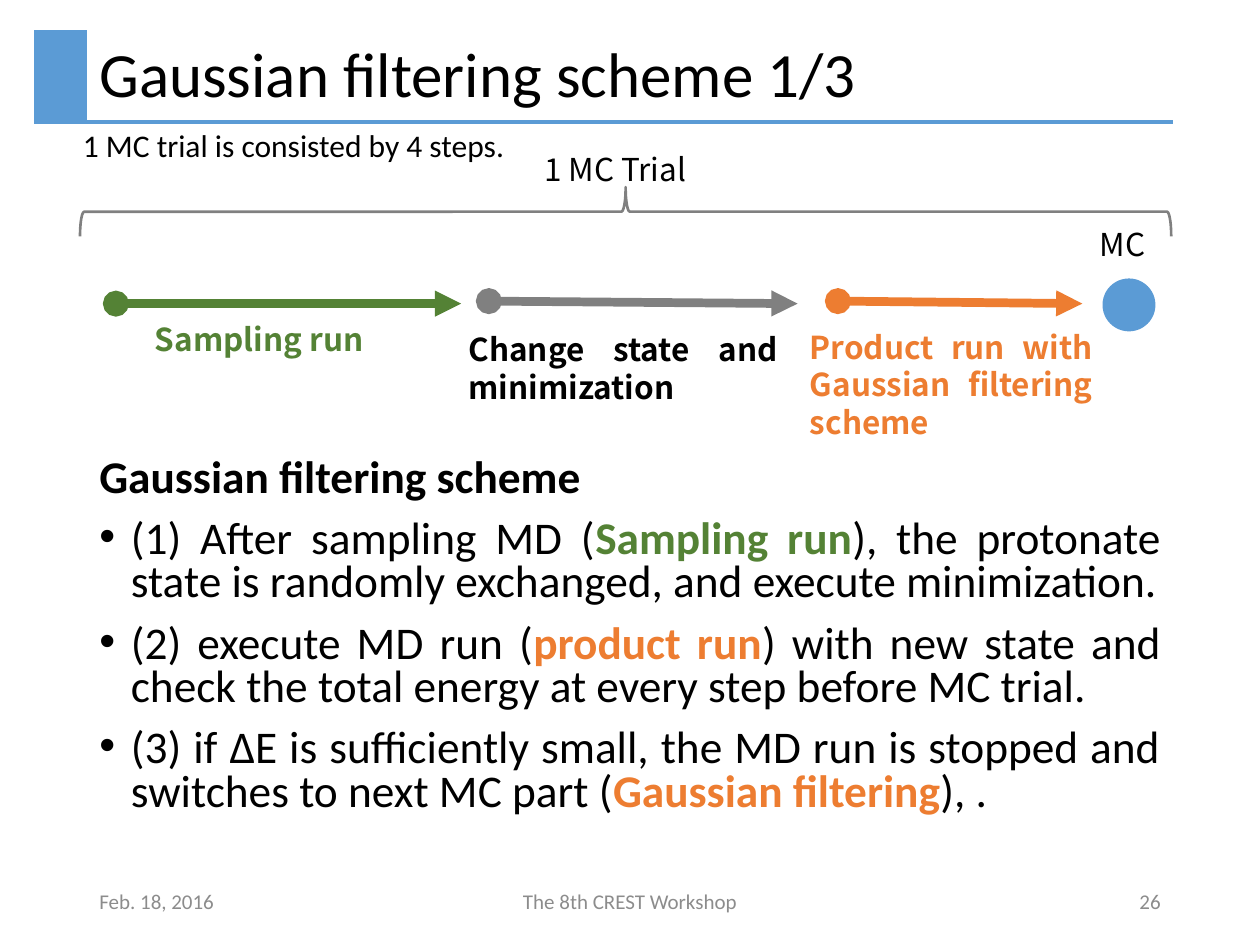
"""Build the Gaussian filtering scheme slide on a grid of 100 columns by 75 rows."""
import dataclasses
import typing

import pptx
import pptx.dml.color
import pptx.enum.dml
import pptx.enum.shapes
import pptx.enum.text
import pptx.oxml
import pptx.oxml.ns
import pptx.util

RGB = pptx.dml.color.RGBColor
BLACK = RGB(0x00, 0x00, 0x00)
BLUE = RGB(0x5B, 0x9B, 0xD5)
GREEN = RGB(0x54, 0x82, 0x35)
ORANGE = RGB(0xED, 0x7D, 0x31)
GRAY = RGB(0x80, 0x80, 0x80)
PALE = RGB(0x8C, 0x8C, 0x8C)

ALIGN = pptx.enum.text.PP_ALIGN
ANCHOR = pptx.enum.text.MSO_ANCHOR
SHAPE = pptx.enum.shapes.MSO_SHAPE
CELL = pptx.util.Inches(0.1)
COLS, ROWS = 100, 75
MARGIN, CONTENT = 6.9, 86.2
LABEL_FONT = "Noto Sans CJK JP"


class Box(typing.NamedTuple):
    """Left, top, width and height in grid cells."""
    col: float
    row: float
    cols: float
    rows: float


class Span(typing.NamedTuple):
    """A run of text, coloured and bold when it is a keyword."""
    text: str
    color: RGB = BLACK
    bold: bool = False


@dataclasses.dataclass
class Label:
    """A caption of the timeline."""
    text: str
    box: Box
    color: RGB = BLACK
    bold: bool = False


@dataclasses.dataclass
class Phase:
    """An arrow of the timeline."""
    start: tuple[float, float]
    end: tuple[float, float]
    color: RGB


@dataclasses.dataclass
class Footer:
    """A text at the foot of the slide."""
    text: str
    col: float
    cols: float
    align: ALIGN


LABELS = [
    Label("Sampling run", Box(11.3, 24.9, 26.9, 4), GREEN, True),
    Label("MC", Box(86.3, 17.4, 6.4, 4)),
    Label("1 MC Trial", Box(42.2, 11.4, 14.5, 4)),
    Label("Product run with Gaussian filtering scheme", Box(63.3, 25.5, 24.4, 10.1), ORANGE, True),
    Label("Change state and minimization", Box(36.2, 25.7, 26.5, 7.1), BLACK, True),
]
PHASES = [
    Phase((9.2, 24.1), (36.6, 24.1), GREEN),
    Phase((66.5, 23.9), (85.9, 24.1), ORANGE),
    Phase((38.8, 23.9), (63.3, 24.1), GRAY),
]
FOOTERS = [
    Footer("Feb. 18, 2016", MARGIN, 22.5, ALIGN.LEFT),
    Footer("The 8th CREST Workshop", 33.1, 33.8, ALIGN.CENTER),
    Footer("26", 70.6, 22.5, ALIGN.RIGHT),
]
HEADING = [Span("Gaussian filtering scheme", bold=True)]
STEPS = [
    [Span("(1) After sampling MD ("), Span("Sampling run", GREEN, True),
     Span("), the protonate state is randomly exchanged, and execute minimization.")],
    [Span("(2) execute MD run ("), Span("product run", ORANGE, True),
     Span(") with new state and check the total energy at every step before MC trial.")],
    [Span("(3) if ∆E is sufficiently small, the MD run is stopped and switches to next MC part ("),
     Span("Gaussian filtering", ORANGE, True), Span("), .")],
]


def cells(*counts: float) -> list[int]:
    """Turn counts of grid cells into lengths."""
    return [round(CELL * count) for count in counts]


def add_bullet(p: typing.Any) -> None:
    """Give a paragraph a bullet and a hanging indent."""
    p_pr = p._p.get_or_add_pPr()
    indent = pptx.util.Inches(0.25)
    p_pr.set("marL", str(indent))
    p_pr.set("indent", str(-indent))
    for tag, key, value in (("a:buFont", "typeface", "Arial"), ("a:buChar", "char", "•")):
        bullet = pptx.oxml.ns.qn(tag)
        p_pr.append(p_pr.makeelement(bullet, {key: value}))


def add_text(s: typing.Any, box: Box, paragraphs: list[list[Span]], *, size: float = 18,
             font: str = "Calibri", align: ALIGN = ALIGN.LEFT, anchor: ANCHOR = ANCHOR.TOP,
             spacing: float = 1.0, before: float = 0, bullets_from: int | None = None) -> None:
    """Add a text box of formatted paragraphs."""
    tf = s.shapes.add_textbox(*cells(*box)).text_frame
    tf.word_wrap = True
    tf.vertical_anchor = anchor
    for i, spans in enumerate(paragraphs):
        p = tf.add_paragraph() if i else tf.paragraphs[0]
        p.alignment = align
        p.line_spacing = spacing
        p.space_before = pptx.util.Pt(before)
        if bullets_from is not None and i >= bullets_from:
            add_bullet(p)
        for span in spans:
            r = p.add_run()
            r.text = span.text
            r.font.name = font
            r.font.size = pptx.util.Pt(size)
            r.font.bold = span.bold
            r.font.color.rgb = span.color


def add_block(s: typing.Any, kind: SHAPE, box: Box) -> None:
    """Add a solid blue shape without an outline."""
    sp = s.shapes.add_shape(kind, *cells(*box))
    sp.shadow.inherit = False
    sp.fill.solid()
    sp.fill.fore_color.rgb = BLUE
    sp.line.fill.background()


def add_brace(s: typing.Any, box: Box) -> None:
    """Add the brace, turned to open downwards."""
    sp = s.shapes.add_shape(SHAPE.LEFT_BRACE, *cells(*box))
    sp.rotation = 90
    sp.shadow.inherit = False
    sp.fill.background()
    sp.line.color.rgb = GRAY
    sp.line.width = pptx.util.Pt(1.5)


def add_line(s: typing.Any, start: tuple[float, float], end: tuple[float, float],
             color: RGB, width: float, arrow: bool = False) -> None:
    """Add a line, with a dot at its start and an arrowhead at its end if asked."""
    line = s.shapes.add_connector(pptx.enum.shapes.MSO_CONNECTOR.STRAIGHT, *cells(*start, *end))
    line.line.color.rgb = color
    line.line.width = pptx.util.Pt(width)
    sp_pr = line._element.spPr
    if arrow:
        ln = line.line._get_or_add_ln()
        for tag, kind in (("a:headEnd", "oval"), ("a:tailEnd", "triangle")):
            ln.append(ln.makeelement(pptx.oxml.ns.qn(tag), {"type": kind}))
    sp_pr.append(sp_pr.makeelement(pptx.oxml.ns.qn("a:effectLst"), {}))


def main() -> None:
    """Draw the slide and save it."""
    prs = pptx.Presentation()
    prs.slide_width, prs.slide_height = cells(COLS, ROWS)
    s = prs.slides.add_slide(prs.slide_layouts[6])

    add_text(s, Box(MARGIN, 2.4, CONTENT, 7.4), [[Span("Gaussian filtering scheme 1/3")]],
             size=36, anchor=ANCHOR.MIDDLE, spacing=0.9)
    add_text(s, Box(MARGIN, 35.9, CONTENT, 31.7), [HEADING, *STEPS], size=25.9,
             align=ALIGN.JUSTIFY, spacing=0.8, before=10, bullets_from=1)
    for footer in FOOTERS:
        add_text(s, Box(footer.col, 69.5, footer.cols, 4), [[Span(footer.text, PALE)]],
                 size=12, align=footer.align, anchor=ANCHOR.MIDDLE)

    add_block(s, SHAPE.RECTANGLE, Box(2.7, 2.4, 4.2, 7.4))
    add_line(s, (2.7, 9.7), (93.1, 9.7), BLUE, 2)
    add_block(s, SHAPE.OVAL, Box(87.5, 22.1, 4.2, 4.2))
    add_brace(s, Box(47.7, -26.5, 3.9, 86.6))
    for phase in PHASES:
        add_line(s, phase.start, phase.end, phase.color, 5, arrow=True)
    for label in LABELS:
        add_text(s, label.box, [[Span(label.text, label.color, label.bold)]],
                 font=LABEL_FONT, align=ALIGN.JUSTIFY)
    add_text(s, Box(5.6, 9.5, 89.2, 4), [[Span("1 MC trial is consisted by 4 steps.")]])
    prs.save("out.pptx")


if __name__ == "__main__":
    main()
